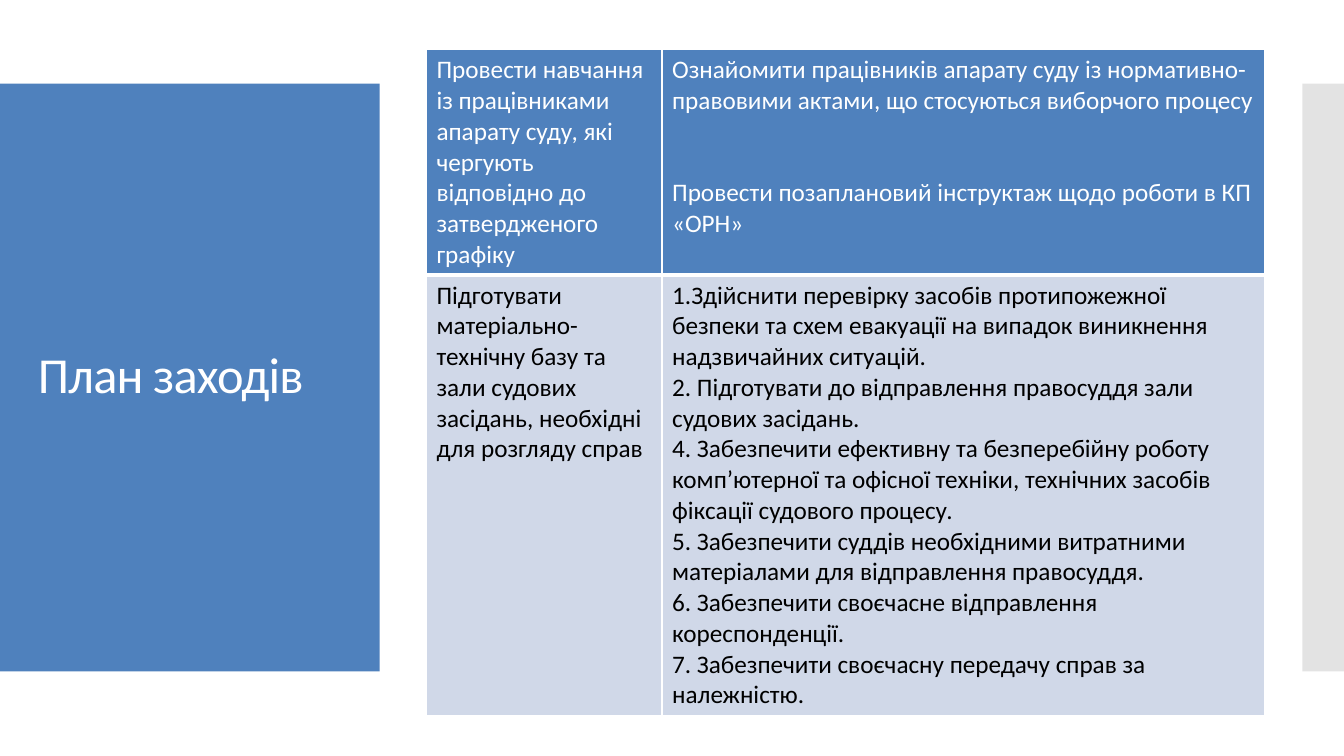
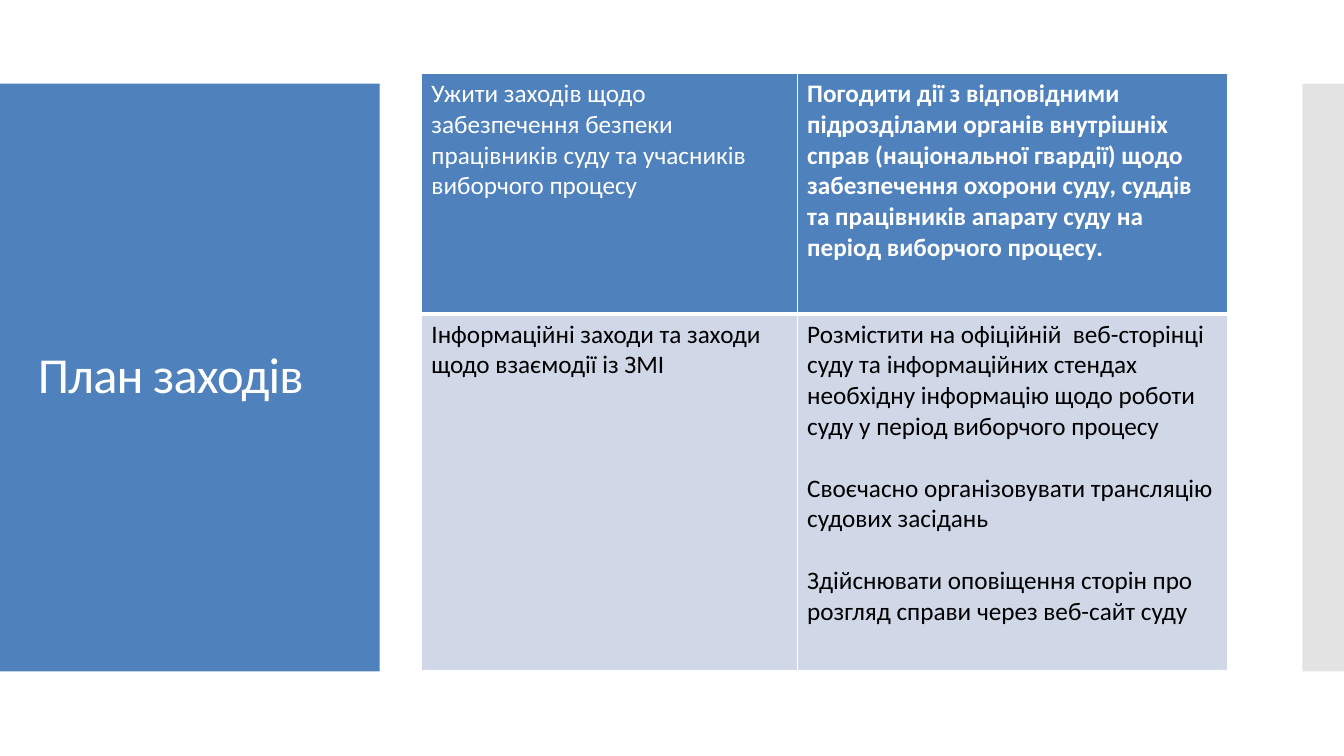
"""Build two slides with the court's election-period plan of measures."""
from dataclasses import dataclass

from lxml import etree
from pptx import Presentation
from pptx.dml.color import RGBColor
from pptx.enum.shapes import MSO_SHAPE
from pptx.enum.text import MSO_ANCHOR
from pptx.oxml.ns import qn
from pptx.util import Pt

RECT = MSO_SHAPE.RECTANGLE
MIDDLE = MSO_ANCHOR.MIDDLE
FONT = "Calibri"
COLORS = {"blue": "4F81BD", "gray": "C8C8C8", "pale": "D0D8E8",
          "white": "FFFFFF", "black": "000000"}
TITLE = "План заходів"
TEXT_SIZE = 18
LINE_HEIGHT = 22
THIN, THICK = 1, 3


@dataclass
class Band:
    left: float
    width: float
    color: str
    opacity: int = 100
    top: float = 59.8
    height: float = 419.8


@dataclass
class CellText:
    paragraphs: list[str]
    blank_lines: int = 0
    bold: bool = False


@dataclass
class PlanTable:
    left: float
    top: float
    cols: list[float]
    rows: list[float]
    cells: list[list[CellText]]


BANDS = [Band(0, 271.2, "blue"), Band(930.4, 29.6, "gray", 50)]

PLANS = [
    PlanTable(304.6, 35.5, [168.3, 430.7], [161, 315], [
        [
            CellText(["Провести навчання із працівниками апарату суду, які чергують "
                      "відповідно до затвердженого графіку"]),
            CellText(["Ознайомити працівників апарату суду із нормативно-правовими "
                      "актами, що стосуються виборчого процесу",
                      "Провести позаплановий інструктаж щодо роботи в КП «ОРН»"],
                     blank_lines=2),
        ],
        [
            CellText(["Підготувати матеріально-технічну базу та зали судових засідань, "
                      "необхідні для розгляду справ"]),
            CellText(["1.Здійснити перевірку засобів протипожежної безпеки та схем "
                      "евакуації на випадок виникнення надзвичайних ситуацій.",
                      "2. Підготувати до відправлення правосуддя зали судових засідань.",
                      "4. Забезпечити ефективну та безперебійну роботу комп’ютерної та "
                      "офісної техніки, технічних засобів фіксації судового процесу.",
                      "5. Забезпечити суддів необхідними витратними матеріалами для "
                      "відправлення правосуддя.",
                      "6. Забезпечити своєчасне відправлення кореспонденції.",
                      "7. Забезпечити своєчасну передачу справ за належністю."]),
        ],
    ]),
    PlanTable(301, 52.6, [268.4, 307.6], [171.8, 254.6], [
        [
            CellText(["Ужити заходів щодо забезпечення безпеки працівників суду та "
                      "учасників виборчого процесу"]),
            CellText(["Погодити дії з відповідними підрозділами органів внутрішніх "
                      "справ (національної гвардії) щодо забезпечення охорони суду, "
                      "суддів та працівників апарату суду на період виборчого процесу."],
                     bold=True),
        ],
        [
            CellText(["Інформаційні заходи та заходи щодо взаємодії із ЗМІ"]),
            CellText(["Розмістити на офіційній  веб-сторінці суду та інформаційних "
                      "стендах необхідну інформацію щодо роботи суду у період "
                      "виборчого процесу",
                      "Своєчасно організовувати трансляцію судових засідань",
                      "Здійснювати оповіщення сторін про розгляд справи через "
                      "веб-сайт суду"], blank_lines=1),
        ],
    ]),
]


def rgb(name: str) -> RGBColor:
    """Return the named palette colour."""
    return RGBColor.from_string(COLORS[name])


def style_run(r, size: float, color: str, bold: bool = False) -> None:
    """Format one run of text."""
    r.font.name = FONT
    r.font.size = Pt(size)
    r.font.bold = bold
    r.font.color.rgb = rgb(color)


def add_band(s, band: Band) -> None:
    """Draw a plain side band."""
    sp = s.shapes.add_shape(RECT, Pt(band.left), Pt(band.top),
                            Pt(band.width), Pt(band.height))
    sp.shadow.inherit = False
    sp.fill.solid()
    sp.fill.fore_color.rgb = rgb(band.color)
    sp.line.fill.background()
    if band.opacity < 100:
        color = next(sp.element.iter(qn("a:srgbClr")))
        etree.SubElement(color, qn("a:alpha"), val=str(band.opacity * 1000))


def add_title(s, text: str) -> None:
    """Write the slide title on the left band."""
    sp = s.shapes.add_textbox(Pt(20), Pt(88.6), Pt(232), Pt(362))
    tf = sp.text_frame
    tf.word_wrap = True
    tf.vertical_anchor = MIDDLE
    tf.text = text
    p = tf.paragraphs[0]
    p.line_spacing = 0.9
    style_run(p.runs[0], 36, "white")
    next(sp.element.iter(qn("a:rPr"))).set("spc", "-60")


def set_borders(cell, top: float, bottom: float) -> None:
    """Give a cell white borders."""
    tc_pr = cell._tc.get_or_add_tcPr()
    widths = {"a:lnL": THIN, "a:lnR": THIN, "a:lnT": top, "a:lnB": bottom}
    for tag, width in widths.items():
        ln = etree.SubElement(tc_pr, qn(tag), w=str(Pt(width)))
        fill = etree.SubElement(ln, qn("a:solidFill"))
        etree.SubElement(fill, qn("a:srgbClr"), val=COLORS["white"])


def fill_cell(cell, content: CellText, is_header: bool) -> None:
    """Write and colour one table cell."""
    set_borders(cell, THIN if is_header else THICK, THICK if is_header else THIN)
    cell.fill.solid()
    cell.fill.fore_color.rgb = rgb("blue" if is_header else "pale")
    tf = cell.text_frame
    tf.text = "\n".join(content.paragraphs)
    for i, p in enumerate(tf.paragraphs):
        if i:
            p.space_before = Pt(content.blank_lines * LINE_HEIGHT)
        style_run(p.runs[0], TEXT_SIZE, "white" if is_header else "black", content.bold)


def add_plan(s, plan: PlanTable) -> None:
    """Draw the table of measures."""
    frame = s.shapes.add_table(len(plan.rows), len(plan.cols), Pt(plan.left), Pt(plan.top),
                               Pt(sum(plan.cols)), Pt(sum(plan.rows)))
    table = frame.table
    table.horz_banding = False
    for col, width in zip(table.columns, plan.cols):
        col.width = Pt(width)
    for i, (row, height) in enumerate(zip(table.rows, plan.rows)):
        row.height = Pt(height)
        for cell, content in zip(row.cells, plan.cells[i]):
            fill_cell(cell, content, i == 0)


def main() -> None:
    """Build and save the presentation."""
    prs = Presentation()
    prs.slide_width, prs.slide_height = Pt(960), Pt(540)
    for plan in PLANS:
        s = prs.slides.add_slide(prs.slide_layouts[6])
        for band in BANDS:
            add_band(s, band)
        add_title(s, TITLE)
        add_plan(s, plan)
    prs.save("out.pptx")


if __name__ == "__main__":
    main()
